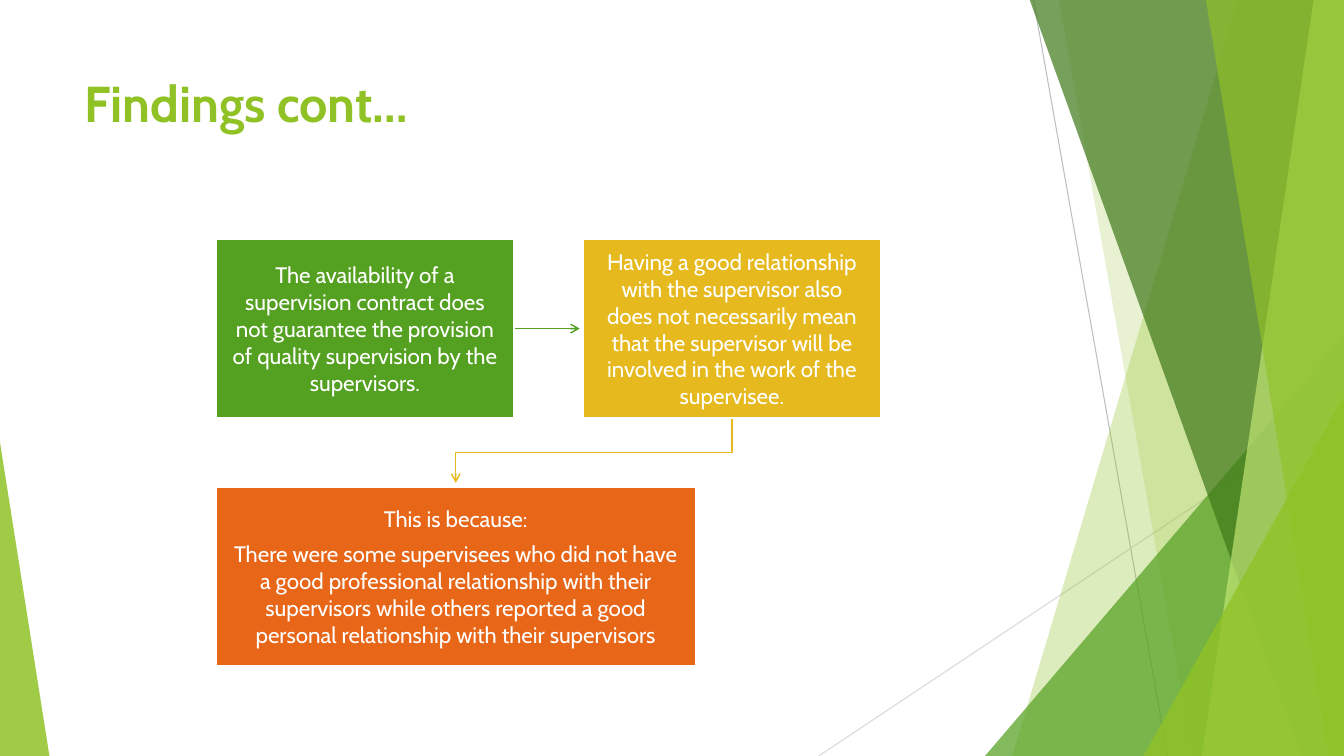
"""Build the findings slide: three linked boxes beside a green facet design."""
from pptx import Presentation
from pptx.dml.color import RGBColor
from pptx.enum.shapes import MSO_CONNECTOR, MSO_SHAPE
from pptx.enum.text import MSO_ANCHOR, PP_ALIGN
from pptx.oxml.ns import qn
from pptx.util import Pt
from lxml.etree import SubElement

PX = 9144
WIDE, HIGH = 1333, 750
THEME = {
    "font": "Cabin", "title": 36, "body": 16, "gap": 5.6,
    "lime": "90C226", "green": "54A021", "dark": "3F7819", "pale": "C0E474",
    "gold": "E6B91E", "rust": "E76618", "white": "FFFFFF",
    "gray": "BFBFBF", "mist": "D9D9D9",
}


def write(shape, *lines, size, color, bold=False, align=PP_ALIGN.LEFT,
          anchor=MSO_ANCHOR.TOP, inset=(10, 5), after=0):
    frame = shape.text_frame
    frame.word_wrap = True
    frame.vertical_anchor = anchor
    frame.margin_left = frame.margin_right = inset[0] * PX
    frame.margin_top = frame.margin_bottom = inset[1] * PX
    for i, line in enumerate(lines):
        para = frame.add_paragraph() if i else frame.paragraphs[0]
        para.alignment = align
        para.space_after = Pt(after)
        run = para.add_run()
        run.text = line
        run.font.name = THEME["font"]
        run.font.size = Pt(THEME[size])
        run.font.bold = bold
        run.font.color.rgb = RGBColor.from_string(THEME[color])


def paint(shape, fill=None, alpha=100, line=None, width=1, arrow=False):
    props = shape.element.spPr
    if fill:
        shape.fill.solid()
        shape.fill.fore_color.rgb = RGBColor.from_string(THEME[fill])
        if alpha < 100:
            tint = props.find(qn("a:solidFill"))[0]
            SubElement(tint, qn("a:alpha"), val=str(alpha * 1000))
    elif hasattr(shape, "fill"):
        shape.fill.background()
    if line:
        shape.line.color.rgb = RGBColor.from_string(THEME[line])
        shape.line.width = Pt(width)
    else:
        shape.line.fill.background()
    if arrow:
        SubElement(props.find(qn("a:ln")), qn("a:tailEnd"), type="arrow")
    SubElement(props, qn("a:effectLst"))


deck = Presentation()
deck.slide_width, deck.slide_height = WIDE * PX, HIGH * PX
slide = deck.slides.add_slide(deck.slide_layouts[6])
shapes = slide.shapes

rules = [
    ((1025, 0, 1158, HIGH), "gray", 0.75, False),
    ((WIDE, 403, 812, HIGH), "mist", 0.75, False),
    ((510, 326, 575, 326), "green", 1, True),
]
for ends, color, width, arrow in rules:
    rule = shapes.add_connector(MSO_CONNECTOR.STRAIGHT, *[n * PX for n in ends])
    paint(rule, line=color, width=width, arrow=arrow)

facets = [
    ("band", (1228, 1004), "lime", 30),
    ("band", (1050, 1183), "lime", 20),
    ("wedge", (977, 333, 356, 417, 1), "green", 72),
    ("band", (1021, 1291), "dark", 70),
    ("band", (1303, 1192), "pale", 70),
    ("band", (1196, 1318), "lime", 65),
    ("wedge", (1134, 393, 199, 357, 1), "lime", 80),
    ("wedge", (0, 439, 49, 311, 0), "lime", 85),
]
for kind, place, color, alpha in facets:
    if kind == "band":
        top, foot = place
        path = shapes.build_freeform(top, -1, scale=PX)
        path.add_line_segments([(WIDE, -1), (WIDE, HIGH), (foot, HIGH)])
        facet = path.convert_to_shape()
    else:
        *spot, peak = place
        facet = shapes.add_shape(MSO_SHAPE.ISOSCELES_TRIANGLE,
                                 *[n * PX for n in spot])
        facet.adjustments[0] = peak
    paint(facet, color, alpha)

title = shapes.add_textbox(74 * PX, 67 * PX, 940 * PX, 144 * PX)
write(title, "Findings cont…", size="title", color="lime", bold=True)

path = shapes.build_freeform(726, 414, scale=PX)
path.add_line_segments([(726, 449), (452, 449), (452, 479)], close=False)
paint(path.convert_to_shape(), line="gold", arrow=True)

boxes = [
    (214, 237, 296, "green", [
        "The availability of a supervision contract does not guarantee "
        "the provision of quality supervision by the supervisors."]),
    (578, 237, 296, "gold", [
        "Having a good relationship with the supervisor also does not "
        "necessarily mean that the supervisor will be involved in the "
        "work of the supervisee."]),
    (214, 483, 476, "rust", [
        "This is because:",
        "There were some supervisees who did not have a good professional "
        "relationship with their supervisors while others reported a good "
        "personal relationship with their supervisors"]),
]
for left, top, width, color, lines in boxes:
    box = shapes.add_shape(MSO_SHAPE.RECTANGLE, left * PX, top * PX,
                           width * PX, 178 * PX)
    paint(box, color, line="white", width=1.5)
    write(box, *lines, size="body", color="white", align=PP_ALIGN.CENTER,
          anchor=MSO_ANCHOR.MIDDLE, inset=(15, 15), after=THEME["gap"])

deck.save("out.pptx")
